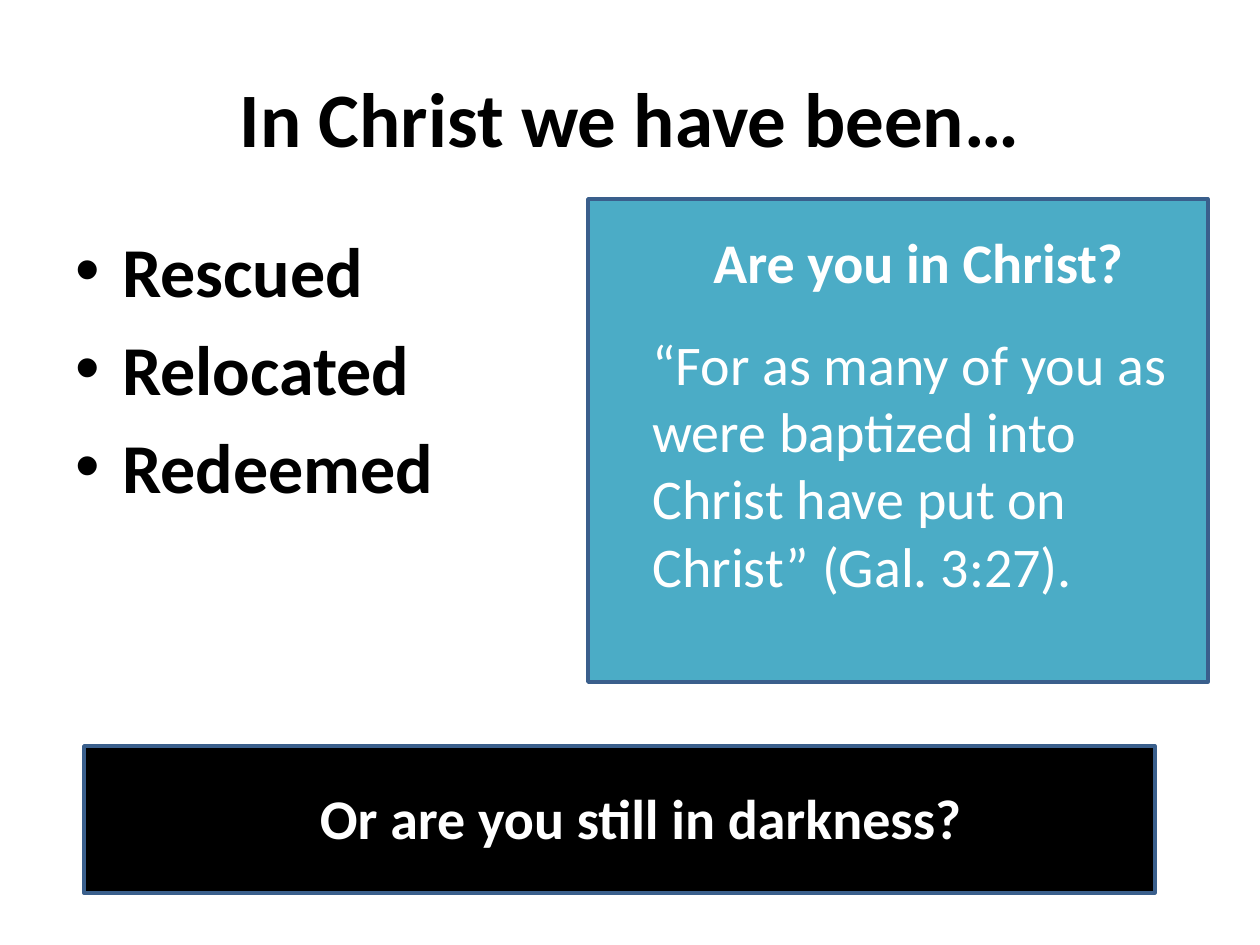
from lxml import etree
from pptx import Presentation
from pptx import util as u
from pptx.dml.color import RGBColor
from pptx.enum import shapes, text
from pptx.oxml.ns import qn

PX = u.Inches(1) / 126
FONT = "Calibri"
COLORS = {"black": "000000", "white": "FFFFFF", "teal": "4BACC6", "edge": "3A5F8C"}


def px(n):
    return u.Emu(round(n * PX))


def color(name):
    return RGBColor.from_string(COLORS[name])


def add_panel(s, box, fill):
    sp = s.shapes.add_shape(shapes.MSO_SHAPE.RECTANGLE, *map(px, box))
    sp.shadow.inherit = False
    sp.fill.solid()
    sp.fill.fore_color.rgb = color(fill)
    sp.line.color.rgb = color("edge")
    sp.line.width = u.Pt(2)


def add_text(s, box, lines, size, ink, align=text.PP_ALIGN.LEFT, gap=0,
             anchor=text.MSO_ANCHOR.TOP):
    tf = s.shapes.add_textbox(*map(px, box)).text_frame
    tf.word_wrap = True
    tf.vertical_anchor = anchor
    tf.text = "\n".join(lines)
    for i, p in enumerate(tf.paragraphs):
        p.alignment = align
        p.space_before = u.Pt(gap if i else 0)
        for r in p.runs:
            r.font.name = FONT
            r.font.size = u.Pt(size)
            r.font.bold = True
            r.font.color.rgb = color(ink)
    return tf


def add_bullet(p, indent):
    pPr = p._p.get_or_add_pPr()
    pPr.set("marL", str(px(indent)))
    pPr.set("indent", str(-px(indent)))
    etree.SubElement(pPr, qn("a:buFont"), typeface="Arial")
    etree.SubElement(pPr, qn("a:buChar"), char="•")


def add_title(s, box):
    add_text(s, box, ["In Christ we have been…"], 44, "black",
             text.PP_ALIGN.CENTER, anchor=text.MSO_ANCHOR.MIDDLE)


def add_blessings(s, box):
    tf = add_text(s, box, ["Rescued", "Relocated", "Redeemed"], 40, "black", gap=8)
    for p in tf.paragraphs:
        add_bullet(p, 47)


def add_question(s, box):
    x, y, w, h = box
    add_panel(s, box, "teal")
    tf = add_text(s, (x + 52, y + 22, w - 63, h - 63), [
        "Are you in Christ?",
        "“For as many of you as were baptized into Christ have put on Christ” (Gal. 3:27).",
    ], 32, "white", gap=20)
    heading, verse = tf.paragraphs
    heading.alignment = text.PP_ALIGN.CENTER
    verse.runs[0].font.bold = False


def add_darkness(s, box):
    x, y, w, h = box
    add_panel(s, box, "black")
    add_text(s, (x + 95, y + 31, w - 147, h - 66), ["Or are you still in darkness?"],
             32, "white", text.PP_ALIGN.CENTER)


def main():
    prs = Presentation()
    prs.slide_width, prs.slide_height = px(1260), px(945)
    s = prs.slides.add_slide(prs.slide_layouts[6])
    add_darkness(s, (84, 746, 1071, 147))
    add_question(s, (588, 199, 620, 483))
    add_title(s, (63, 38, 1134, 158))
    add_blessings(s, (63, 221, 557, 624))
    prs.save("out.pptx")


if __name__ == "__main__":
    main()
